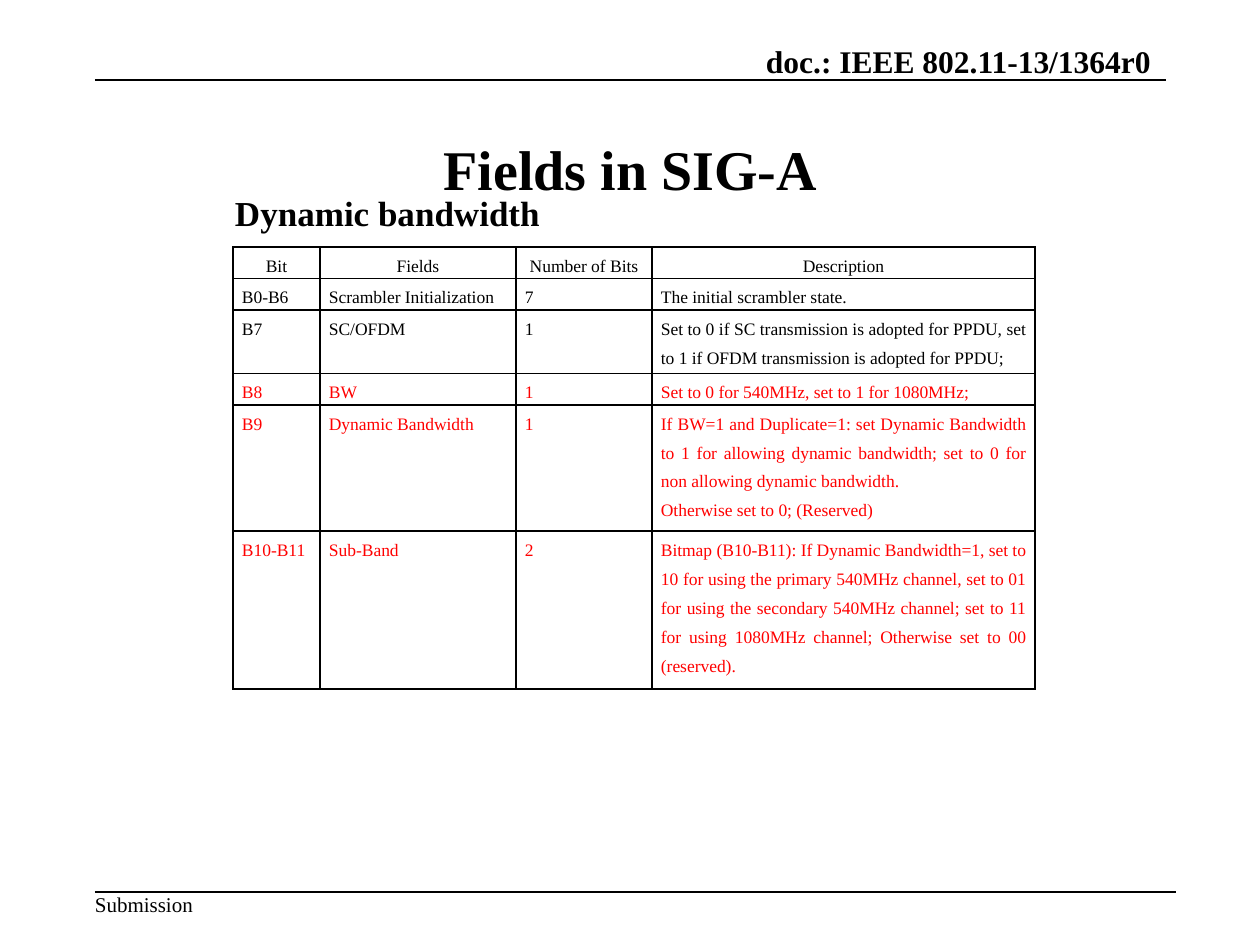
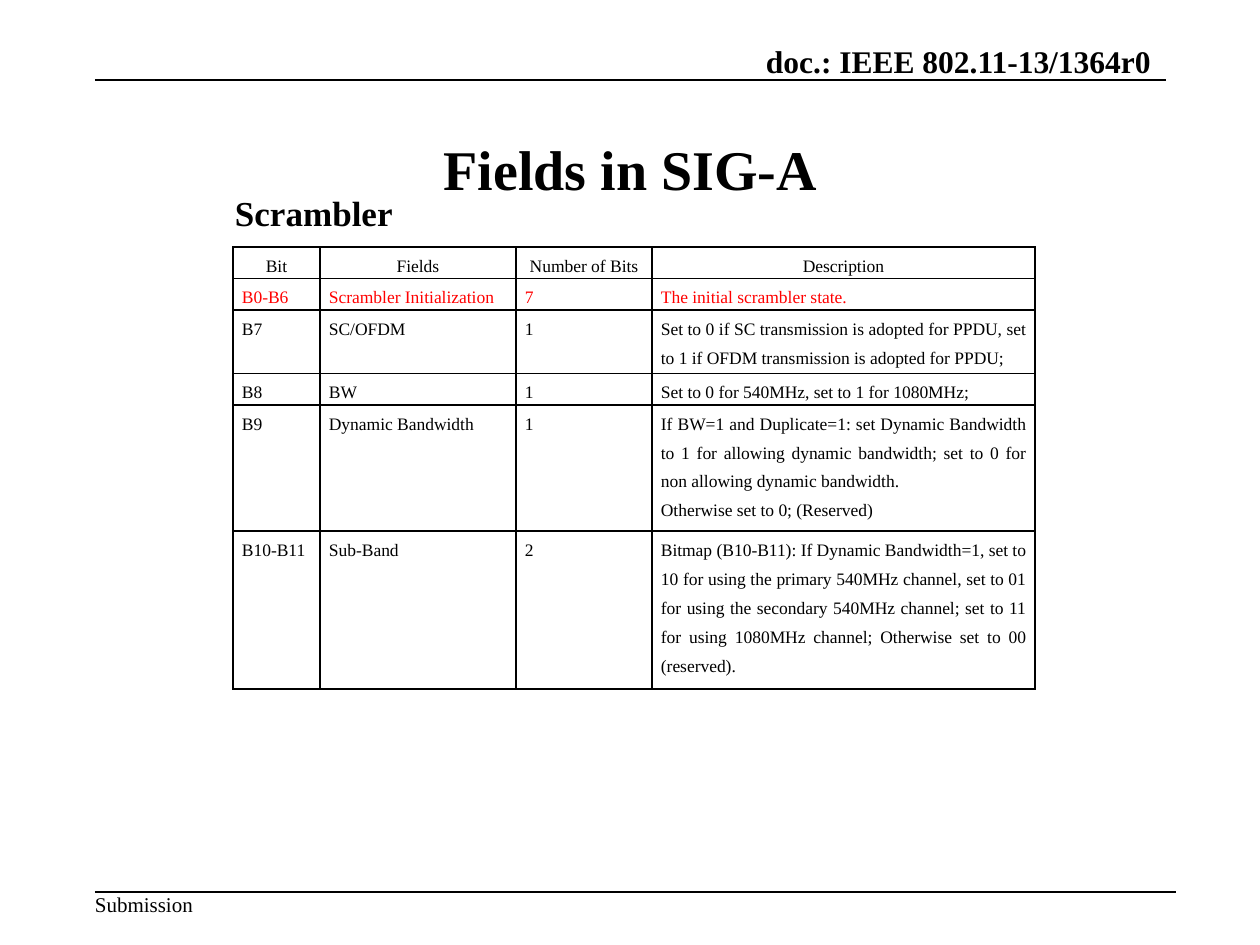
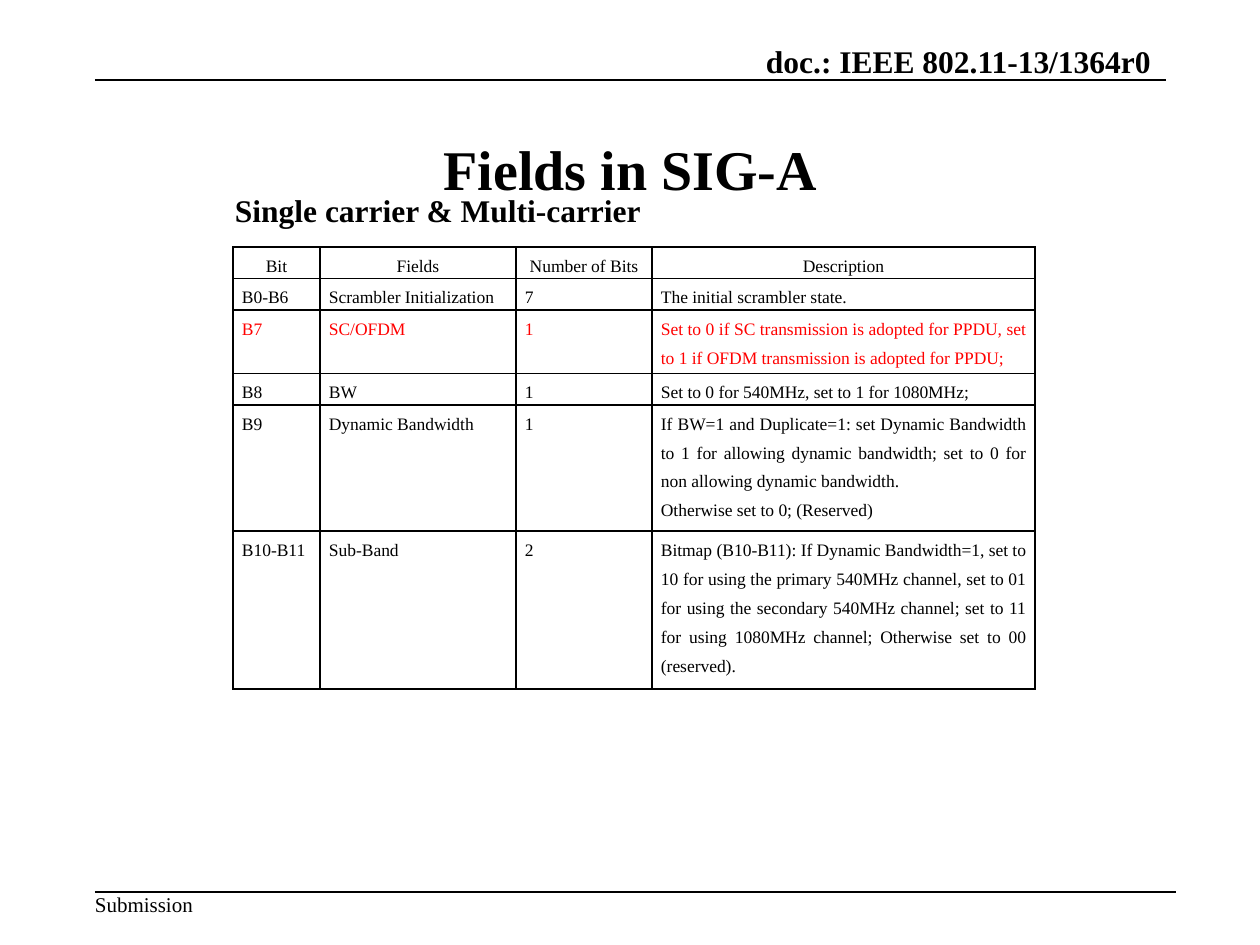
import pptx
import pptx.dml.color
import pptx.enum.shapes
import pptx.enum.text
import pptx.oxml
import pptx.oxml.ns
import pptx.util

PX = 914400 / 126  # EMU per pixel
FONT = "Times New Roman"
BLACK = pptx.dml.color.RGBColor(0x00, 0x00, 0x00)
RED = pptx.dml.color.RGBColor(0xFF, 0x00, 0x00)
ALIGN = pptx.enum.text.PP_ALIGN
ANCHOR = pptx.enum.text.MSO_ANCHOR
AUTO_SIZE = pptx.enum.text.MSO_AUTO_SIZE

TITLE_BOX = (95, 95, 1071, 147)
HEADER_BOX = (95, 42, 1071, 38)
FOOTER_BOX = (95, 892, 1081, 25)
TABLE_LEFT, TABLE_TOP = 233, 247
COLUMN_WIDTHS = (87, 196, 136, 383)
LINES_PER_ROW = (1, 1, 2, 1, 4, 5)

FIELDS = (
    ("Bit", "Fields", "Number of Bits", "Description"),
    ("B0-B6", "Scrambler Initialization", "7", "The initial scrambler state."),
    ("B7", "SC/OFDM", "1",
     "Set to 0 if SC transmission is adopted for PPDU, "
     "set to 1 if OFDM transmission is adopted for PPDU;"),
    ("B8", "BW", "1", "Set to 0 for 540MHz, set to 1 for 1080MHz;"),
    ("B9", "Dynamic Bandwidth", "1",
     "If BW=1 and Duplicate=1: set Dynamic Bandwidth to 1 for allowing dynamic "
     "bandwidth; set to 0 for non allowing dynamic bandwidth.\n"
     "Otherwise set to 0; (Reserved)"),
    ("B10-B11", "Sub-Band", "2",
     "Bitmap (B10-B11): If Dynamic Bandwidth=1, set to 10 for using the primary "
     "540MHz channel, set to 01 for using the secondary 540MHz channel; set to 11 "
     "for using 1080MHz channel; Otherwise set to 00 (reserved)."),
)

# Subheading, its size in points and box, highlighted bits, table height
SLIDES = (
    ("Dynamic bandwidth", 20, (223, 185, 333, 55), ("B8", "B9", "B10-B11"), 406),
    ("Scrambler", 20, (223, 185, 184, 55), ("B0-B6",), 442),
    ("Single carrier & Multi-carrier", 18, (223, 185, 436, 50), ("B7",), 442),
)


def emu(*lengths):
    return [pptx.util.Emu(round(length * PX)) for length in lengths]


def write(frame, text, size, color=BLACK, bold=False, align=ALIGN.LEFT, spacing=None):
    """Fill a text frame, one paragraph for each line of the text."""
    frame.text = text
    for paragraph in frame.paragraphs:
        paragraph.alignment = align
        if spacing:
            paragraph.line_spacing = spacing
        for run in paragraph.runs:
            run.font.name = FONT
            run.font.size = pptx.util.Pt(size)
            run.font.bold = bold
            run.font.color.rgb = color


def add_label(slide, box, text, size, inset=0, anchor=ANCHOR.TOP, **style):
    frame = slide.shapes.add_textbox(*emu(*box)).text_frame
    frame.word_wrap = False
    frame.auto_size = AUTO_SIZE.SHAPE_TO_FIT_TEXT
    frame.vertical_anchor = anchor
    frame.margin_left = frame.margin_right = emu(2 * inset)[0]
    frame.margin_top = frame.margin_bottom = emu(inset)[0]
    write(frame, text, size, **style)


def add_rule(slide, left, y, width):
    rule = slide.shapes.add_connector(
        pptx.enum.shapes.MSO_CONNECTOR.STRAIGHT, *emu(left, y, left + width, y))
    rule.line.color.rgb = BLACK
    rule.line.width = pptx.util.Pt(1)
    properties = rule._element.spPr
    properties.append(properties.makeelement(pptx.oxml.ns.qn("a:effectLst")))


def add_header(slide, left, top, width, height):
    add_label(slide, (left + 604, top, 452, height), "doc.: IEEE 802.11-13/1364r0",
              18, anchor=ANCHOR.BOTTOM, bold=True, align=ALIGN.RIGHT)
    add_rule(slide, left, top + height, width)


def add_footer(slide, left, top, width, height):
    add_rule(slide, left, top, width)
    add_label(slide, (left, top, 99, height), "Submission", 12)


def set_title(slide, box, text):
    title = slide.shapes.title
    title.left, title.top, title.width, title.height = emu(*box)
    title.text_frame.vertical_anchor = ANCHOR.MIDDLE
    title.text_frame.auto_size = AUTO_SIZE.NONE
    write(title.text_frame, text, 32, bold=True, align=ALIGN.CENTER)


def add_borders(cell):
    properties = cell._tc.get_or_add_tcPr()
    for side in ("lnL", "lnR", "lnT", "lnB"):
        properties.append(pptx.oxml.parse_xml(
            f'<a:{side} {pptx.oxml.ns.nsdecls("a")} w="12700"><a:solidFill>'
            f'<a:srgbClr val="{BLACK}"/></a:solidFill></a:{side}>'))


def add_field_table(slide, left, top, height, highlighted):
    table = slide.shapes.add_table(
        len(FIELDS), len(COLUMN_WIDTHS),
        *emu(left, top, sum(COLUMN_WIDTHS), height)).table
    table.first_row = table.horz_banding = False
    for column, width in zip(table.columns, COLUMN_WIDTHS):
        column.width = emu(width)[0]

    for row, lines, field in zip(table.rows, LINES_PER_ROW, FIELDS):
        row.height = emu(height * lines / sum(LINES_PER_ROW))[0]
        color = RED if field[0] in highlighted else BLACK
        align = ALIGN.CENTER if field is FIELDS[0] else ALIGN.JUSTIFY
        for cell, text in zip(row.cells, field):
            add_borders(cell)
            cell.fill.background()
            cell.margin_left = cell.margin_right = emu(9)[0]
            cell.margin_top = cell.margin_bottom = 0
            write(cell.text_frame, text, 10, color=color, align=align, spacing=1.5)


def add_field_slide(deck, subheading, size, subheading_box, highlighted, table_height):
    slide = deck.slides.add_slide(deck.slide_layouts.get_by_name("Title Only"))
    add_header(slide, *HEADER_BOX)
    add_footer(slide, *FOOTER_BOX)
    set_title(slide, TITLE_BOX, "Fields in SIG-A")
    add_label(slide, subheading_box, subheading, size, inset=6, bold=True)
    add_field_table(slide, TABLE_LEFT, TABLE_TOP, table_height, highlighted)


def main():
    deck = pptx.Presentation()
    deck.slide_width, deck.slide_height = emu(1260, 945)
    for content in SLIDES:
        add_field_slide(deck, *content)
    deck.save("out.pptx")


if __name__ == "__main__":
    main()
